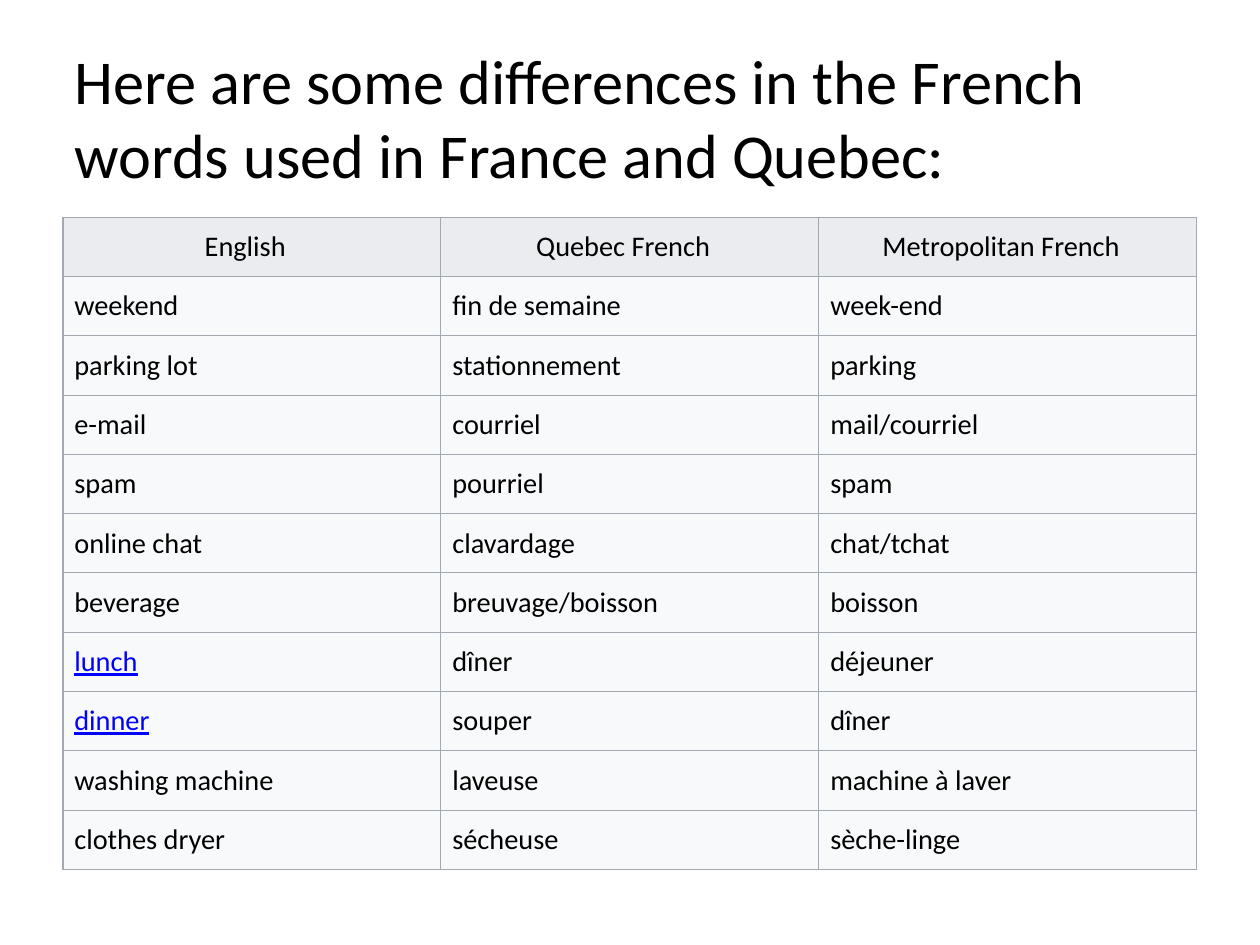
"""Build a slide comparing Quebec and Metropolitan French vocabulary."""
from dataclasses import dataclass

from lxml.etree import SubElement
from pptx import Presentation
from pptx.dml.color import RGBColor as RGB
from pptx.enum.text import MSO_ANCHOR as Anchor, MSO_AUTO_SIZE as AutoSize, PP_ALIGN as Align
from pptx.oxml.ns import qn
from pptx.util import Inches, Pt

TITLE = "Here are some differences in the French words used in France and Quebec:"
HEADER = ("English", "Quebec French", "Metropolitan French")
WORDS = [
    ("weekend", "fin de semaine", "week-end"),
    ("parking lot", "stationnement", "parking"),
    ("e-mail", "courriel", "mail/courriel"),
    ("spam", "pourriel", "spam"),
    ("online chat", "clavardage", "chat/tchat"),
    ("beverage", "breuvage/boisson", "boisson"),
    ("lunch", "dîner", "déjeuner"),
    ("dinner", "souper", "dîner"),
    ("washing machine", "laveuse", "machine à laver"),
    ("clothes dryer", "sécheuse", "sèche-linge"),
]
LINK_WORDS = ("lunch", "dinner")


@dataclass(frozen=True)
class Theme:
    font: str = "Calibri"
    title_size: float = 39.6
    cell_size: float = 18
    text: str = "000000"
    link: str = "0000FF"
    header_fill: str = "EAECF0"
    body_fill: str = "F8F9FA"
    border: str = "A2A9B1"
    border_width: float = 0.75


THEME = Theme()
WIDTH, HEIGHT = Inches(11.11), Inches(8.33)
CONTENT_W = int(WIDTH * 0.9)
MARGIN = (WIDTH - CONTENT_W) // 2
TITLE_TOP, TITLE_H = int(HEIGHT * 0.04), HEIGHT // 6
TABLE_TOP, TABLE_H = int(HEIGHT * 0.23), int(HEIGHT * 0.69)


def style_text(tf, size, color=THEME.text, align=Align.LEFT):
    for p in tf.paragraphs:
        p.alignment = align
        for r in p.runs:
            r.font.name = THEME.font
            r.font.size = Pt(size)
            r.font.color.rgb = RGB.from_string(color)


def add_borders(cell):
    props = cell._tc.get_or_add_tcPr()
    for i, side in enumerate(("lnL", "lnR", "lnT", "lnB")):
        line = props.makeelement(qn(f"a:{side}"), {"w": str(Pt(THEME.border_width))})
        SubElement(SubElement(line, qn("a:solidFill")), qn("a:srgbClr"), val=THEME.border)
        props.insert(i, line)


def fill_cell(cell, text, is_header):
    is_link = text in LINK_WORDS
    cell.text = text
    cell.vertical_anchor = Anchor.MIDDLE
    cell.fill.solid()
    cell.fill.fore_color.rgb = RGB.from_string(THEME.header_fill if is_header else THEME.body_fill)
    style_text(cell.text_frame, THEME.cell_size, THEME.link if is_link else THEME.text,
               Align.CENTER if is_header else Align.LEFT)
    if is_header:
        cell.margin_right = Inches(0.22)
    if is_link:
        cell.text_frame.paragraphs[0].runs[0].font.underline = True
    add_borders(cell)


def add_title(s):
    title = s.shapes.title
    title.left, title.top, title.width, title.height = MARGIN, TITLE_TOP, CONTENT_W, TITLE_H
    tf = title.text_frame
    tf.text = TITLE
    tf.word_wrap = True
    tf.auto_size = AutoSize.NONE
    tf.vertical_anchor = Anchor.MIDDLE
    style_text(tf, THEME.title_size)


def add_word_table(s):
    rows = [HEADER, *WORDS]
    table = s.shapes.add_table(len(rows), len(HEADER), MARGIN, TABLE_TOP, CONTENT_W, TABLE_H).table
    table.horz_banding = False
    for i, row in enumerate(rows):
        for j, text in enumerate(row):
            fill_cell(table.cell(i, j), text, i == 0)
    for r in table.rows:
        r.height = TABLE_H // len(rows)


def main():
    prs = Presentation()
    prs.slide_width, prs.slide_height = WIDTH, HEIGHT
    s = prs.slides.add_slide(prs.slide_layouts[5])
    add_title(s)
    add_word_table(s)
    for cell in s.shapes[1].table.iter_cells():
        for r in cell.text_frame.paragraphs[0].runs:
            r.font.bold = False
    prs.save("out.pptx")


if __name__ == "__main__":
    main()
